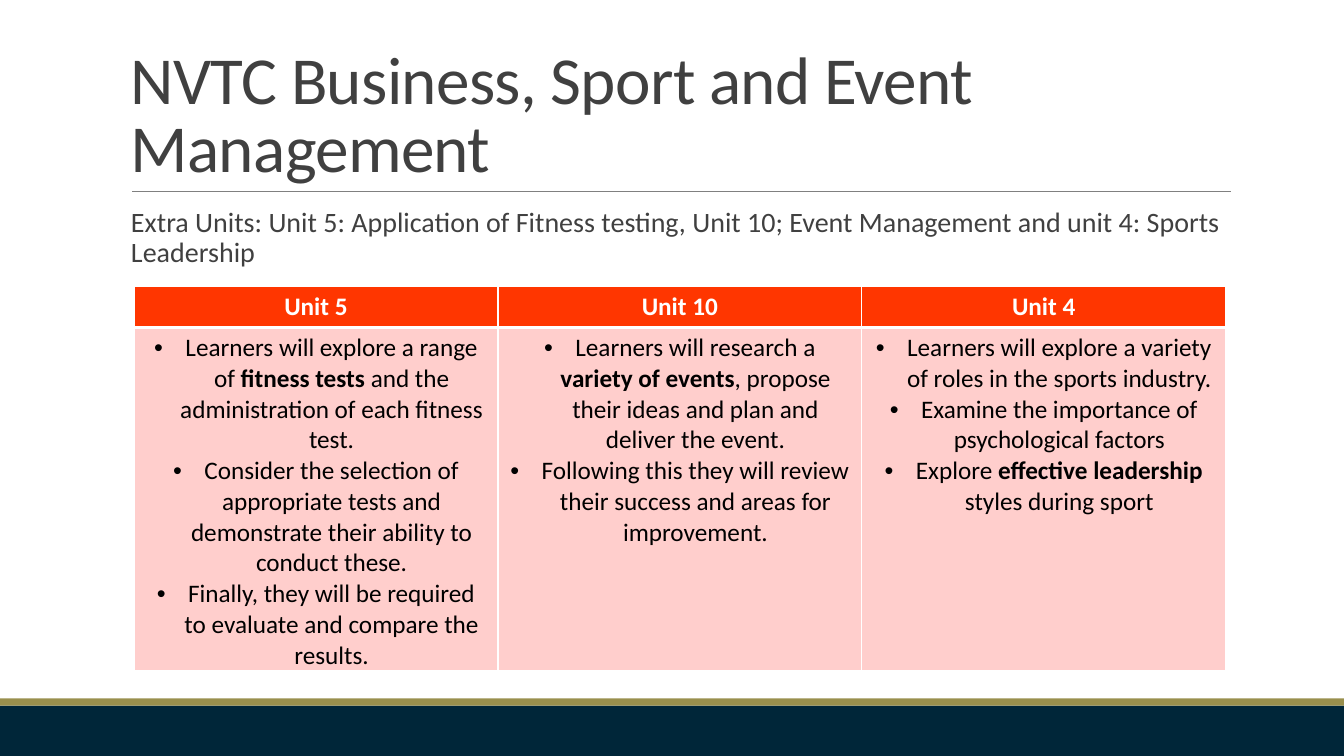
from pptx import Presentation
from pptx.dml.color import RGBColor
from pptx.enum.shapes import MSO_CONNECTOR, MSO_SHAPE
from pptx.enum.text import MSO_ANCHOR, PP_ALIGN
from pptx.oxml.ns import qn
from pptx.util import Emu, Pt
from lxml.etree import SubElement

PX = 9144  # 100 px to the inch
COLORS = {"navy": "002639", "gold": "998F4D", "rule": "808080", "text": "404040",
          "header": "FF3600", "body": "FFCECC", "white": "FFFFFF", "black": "000000"}
UNITS = {
    "Unit 5": [
        "Learners will explore a range of** fitness tests** and the administration of each fitness test.",
        "Consider the selection of appropriate tests and demonstrate their ability to conduct these.",
        "Finally, they will be required to evaluate and compare the results."],
    "Unit 10": [
        "Learners will research a **variety of events**, propose their ideas and plan and deliver the event.",
        "Following this they will review their success and areas for improvement."],
    "Unit 4": [
        "Learners will explore a variety of roles in the sports industry.",
        "Examine the importance of psychological factors",
        "Explore **effective leadership** styles during sport"],
}


def px(n):
    return Emu(round(n * PX))


def rgb(name):
    return RGBColor.from_string(COLORS[name])


def set_attrs(obj, values):
    for name, value in values.items():
        setattr(obj, name, value)


def add_run(p, text, size, color, bold=False):
    r = p.add_run()
    r.text = text
    set_attrs(r.font, {"name": "Calibri", "size": Pt(size), "bold": bold})
    r.font.color.rgb = rgb(color)
    return r


def add_text(s, box, text, size, frame, para):
    tf = s.shapes.add_textbox(*map(px, box)).text_frame
    set_attrs(tf, {"word_wrap": True, **frame})
    p = tf.paragraphs[0]
    set_attrs(p, para)
    return p, add_run(p, text, size, "text")


def add_footer(s, x, y, w, h):
    stripe = 7
    for top, height, color in ((y + stripe, h - stripe, "navy"), (y, stripe, "gold")):
        sp = s.shapes.add_shape(MSO_SHAPE.RECTANGLE, *map(px, (x, top, w, height)))
        sp.shadow.inherit = False
        sp.fill.solid()
        sp.fill.fore_color.rgb = rgb(color)
        sp.line.fill.background()


def add_heading(s, x, y, w, h):
    # Title, with tightened letters
    title_h = 159
    _, r = add_text(s, (x, y, w, title_h), "NVTC Business, Sport and Event Management", 48,
                    {"vertical_anchor": MSO_ANCHOR.BOTTOM}, {"line_spacing": 0.85})
    r.font._element.set("spc", "-50")
    # Rule under the title
    line_y = y + title_h
    line = s.shapes.add_connector(MSO_CONNECTOR.STRAIGHT,
                                  *map(px, (x + 11, line_y, x + w + 1, line_y)))
    line.line.color.rgb = rgb("rule")
    line.line.width = Pt(0.5)
    SubElement(line._element.spPr, qn("a:effectLst"))
    # Subtitle
    sub_y = line_y + 12
    p, _ = add_text(s, (x, sub_y, w, y + h - sub_y),
                    "Extra Units: Unit 5: Application of Fitness testing, Unit 10; "
                    "Event Management and unit 4: Sports Leadership", 20,
                    {"margin_left": 0, "margin_right": 0},
                    {"line_spacing": 0.9, "space_before": Pt(12), "space_after": Pt(2)})
    p._p.get_or_add_pPr().set("marL", str(px(10)))


def add_borders(cell, bottom):
    tc_pr = cell._tc.get_or_add_tcPr()
    for i, (side, width) in enumerate({"L": 1, "R": 1, "T": 1, "B": bottom}.items()):
        ln = SubElement(tc_pr, qn(f"a:ln{side}"), w=str(Pt(width)))
        SubElement(SubElement(ln, qn("a:solidFill")), qn("a:srgbClr"), val=COLORS["white"])
        tc_pr.insert(i, ln)


def style_cell(cell, color, bottom):
    cell.fill.solid()
    cell.fill.fore_color.rgb = rgb(color)
    add_borders(cell, bottom)


def add_bullet(p):
    p_pr = p._p.get_or_add_pPr()
    p_pr.set("marL", str(px(31)))
    p_pr.set("indent", str(px(-31)))
    SubElement(p_pr, qn("a:buFont"), typeface="Arial")
    SubElement(p_pr, qn("a:buChar"), char="•")


def add_units(s, x, y, w, h):
    head_h = 41
    table = s.shapes.add_table(2, len(UNITS), *map(px, (x, y, w, h))).table
    table.rows[0].height, table.rows[1].height = px(head_h), px(h - head_h)
    for col, (unit, points) in enumerate(UNITS.items()):
        table.columns[col].width = px(w / len(UNITS))
        head, body = table.cell(0, col), table.cell(1, col)
        style_cell(head, "header", 3)
        style_cell(body, "body", 1)
        p = head.text_frame.paragraphs[0]
        p.alignment = PP_ALIGN.CENTER
        add_run(p, unit, 18, "white", True)
        # Bulleted points; ** switches bold on and off
        tf = body.text_frame
        for i, point in enumerate(points):
            p = tf.add_paragraph() if i else tf.paragraphs[0]
            p.alignment = PP_ALIGN.CENTER
            add_bullet(p)
            for j, part in enumerate(point.split("**")):
                add_run(p, part, 18, "black", j % 2 == 1)


def main():
    prs = Presentation()
    set_attrs(prs, {"slide_width": px(1333.33), "slide_height": px(750)})
    s = prs.slides.add_slide(prs.slide_layouts[6])
    add_footer(s, 0, 693, 1334, 57)
    add_heading(s, 120, 31, 1100, 254)
    add_units(s, 133, 284, 1083, 381)
    prs.save("out.pptx")


if __name__ == "__main__":
    main()
